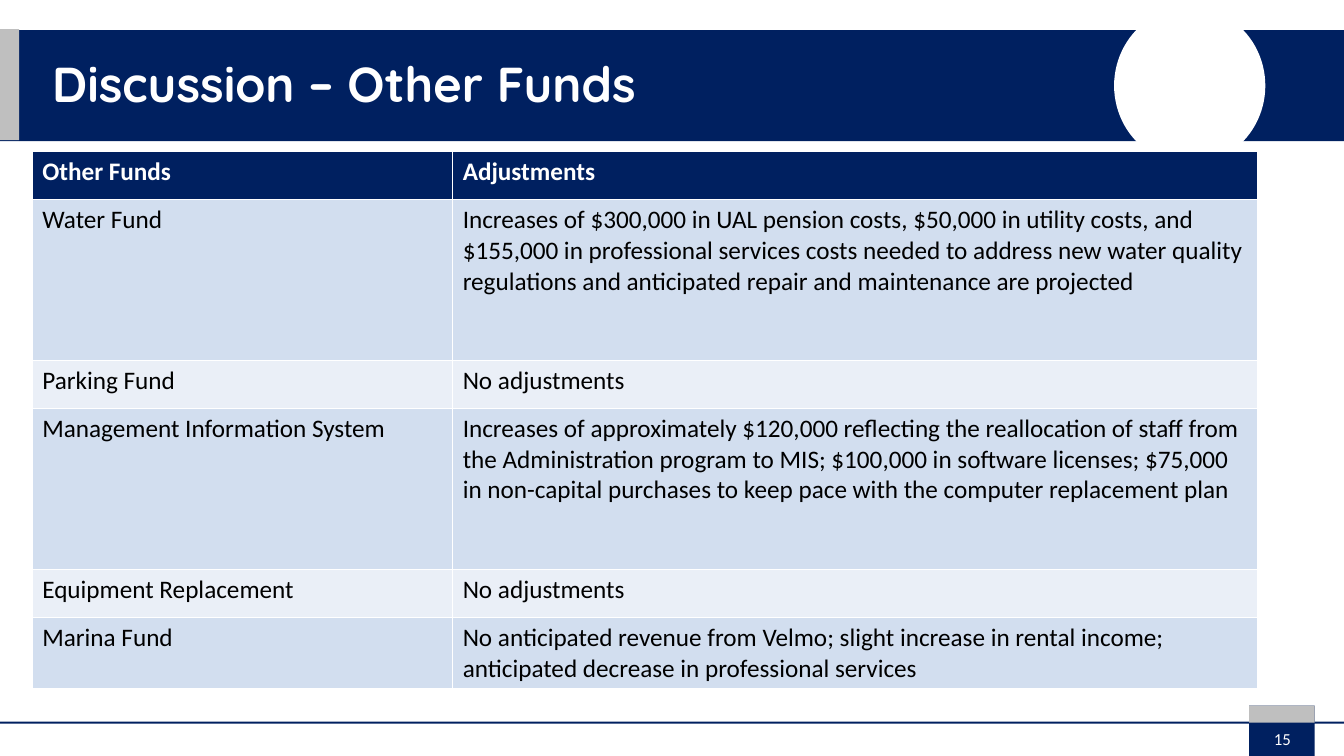
"""Build the slide on budget adjustments to the other funds."""
import pptx
import pptx.util
import pptx.dml.color
import pptx.enum.shapes
import pptx.enum.text

RGB = pptx.dml.color.RGBColor
NAVY = RGB(0x00, 0x20, 0x60)
GRAY = RGB(0xBF, 0xBF, 0xBF)
WHITE = RGB(0xFF, 0xFF, 0xFF)
BLACK = RGB(0x00, 0x00, 0x00)
BLUE = RGB(0xD2, 0xDE, 0xEF)
PALE = RGB(0xEA, 0xEF, 0xF7)
KIND = pptx.enum.shapes.MSO_SHAPE
ALIGN = pptx.enum.text.PP_ALIGN
PX = 9144


def style(font, size, color, bold=False, name="Calibri"):
    looks = {"name": name, "size": pptx.util.Pt(size), "bold": bold}
    for key, value in looks.items():
        setattr(font, key, value)
    font.color.rgb = color


deck = pptx.Presentation()
deck.slide_width = 1333 * PX
deck.slide_height = 750 * PX
slide = deck.slides.add_slide(deck.slide_layouts[6])

for kind, box, color in [
    (KIND.RECTANGLE, (0, 30, 1333, 110), NAVY),
    (KIND.OVAL, (1105, 7, 150, 156), WHITE),
    (KIND.RECTANGLE, (0, 29, 19, 110), GRAY),
    (KIND.RECTANGLE, (0, 716, 1333, 2), NAVY),
    (KIND.RECTANGLE, (1239, 700, 65, 50), NAVY),
    (KIND.RECTANGLE, (1239, 700, 65, 17), GRAY),
]:
    shape = slide.shapes.add_shape(kind, *[n * PX for n in box])
    shape.shadow.inherit = False
    shape.fill.solid()
    shape.fill.fore_color.rgb = color
    shape.line.fill.background()

for text, box, size, bold, name, align, space in [
    ("Discussion – Other Funds", (42, 40, 1043, 91), 35, True, "Quicksand", ALIGN.LEFT, 0.9),
    ("15", (1227, 713, 90, 40), 12, False, "Calibri", ALIGN.CENTER, 1.0),
]:
    frame = slide.shapes.add_textbox(*[n * PX for n in box]).text_frame
    frame.word_wrap = True
    frame.vertical_anchor = pptx.enum.text.MSO_ANCHOR.MIDDLE
    para = frame.paragraphs[0]
    para.text = text
    para.alignment = align
    para.line_spacing = space
    style(para.font, size, WHITE, bold, name)

rows = [
    (48, "Other Funds", "Adjustments"),
    (160, "Water Fund",
     "Increases of $300,000 in UAL pension costs, $50,000 in utility costs, and "
     "$155,000 in professional services costs needed to address new water quality "
     "regulations and anticipated repair and maintenance are projected"),
    (47, "Parking Fund", "No adjustments"),
    (160, "Management Information System",
     "Increases of approximately $120,000 reflecting the reallocation of staff from "
     "the Administration program to MIS; $100,000 in software licenses; $75,000 "
     "in non-capital purchases to keep pace with the computer replacement plan"),
    (48, "Equipment Replacement", "No adjustments"),
    (70, "Marina Fund",
     "No anticipated revenue from Velmo; slight increase in rental income; "
     "anticipated decrease in professional services"),
]
table = slide.shapes.add_table(
    len(rows), 2, 32 * PX, 150 * PX, 1215 * PX, 533 * PX).table
for col, width in zip(table.columns, (417, 798)):
    col.width = width * PX
for i, (height, *texts) in enumerate(rows):
    table.rows[i].height = height * PX
    head = i == 0
    fill = NAVY if head else BLUE if i % 2 else PALE
    for cell, text in zip(table.rows[i].cells, texts):
        cell.text = text
        cell.fill.solid()
        cell.fill.fore_color.rgb = fill
        style(cell.text_frame.paragraphs[0].font, 18, WHITE if head else BLACK, head)

deck.save("out.pptx")
